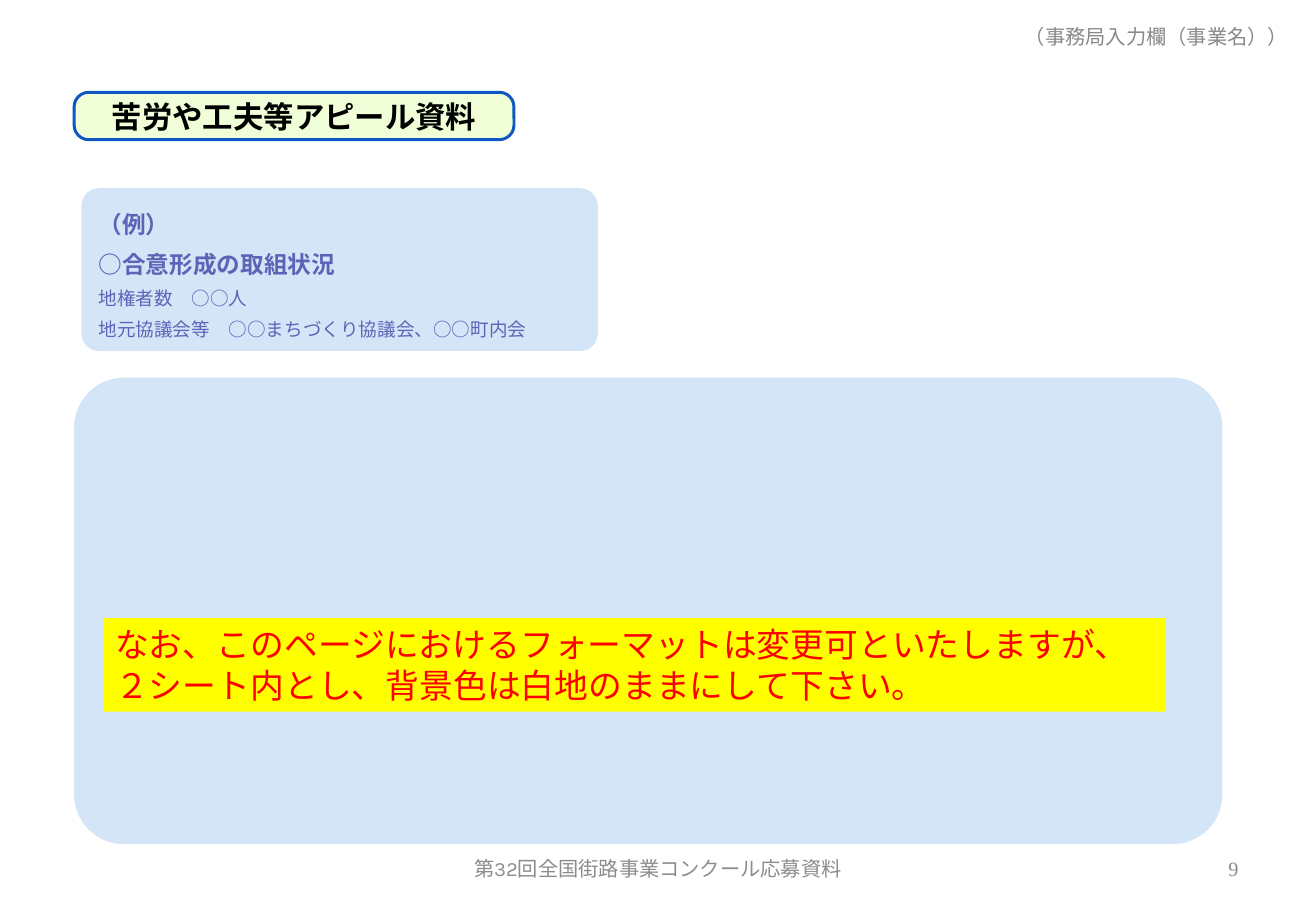
from pptx import Presentation
from pptx.dml.color import RGBColor
from pptx.enum.lang import MSO_LANGUAGE_ID
from pptx.enum.shapes import MSO_SHAPE
from pptx.enum.text import MSO_ANCHOR, PP_ALIGN
from pptx.util import Inches, Pt

BLACK = RGBColor(0x00, 0x00, 0x00)
RED = RGBColor(0xFF, 0x00, 0x00)
YELLOW = RGBColor(0xFF, 0xFF, 0x00)
PALE_BLUE = RGBColor(0xD4, 0xE5, 0xF7)
PALE_GREEN = RGBColor(0xF0, 0xFF, 0xD7)
BLUE = RGBColor(0x0E, 0x58, 0xC4)
VIOLET = RGBColor(0x5C, 0x64, 0xB7)
GRAY = RGBColor(0x89, 0x89, 0x89)
FOOTER_GRAY = RGBColor(0x8C, 0x8C, 0x8C)

SERIF = "Times New Roman"
TITLE = "苦労や工夫等アピール資料"
EXAMPLE = [
    ("（例）", 14, True),
    ("○合意形成の取組状況", 14, True),
    ("地権者数　○○人", 11, False),
    ("地元協議会等　○○まちづくり協議会、○○町内会", 11, False),
]
NOTICE = (
    "なお、このページにおけるフォーマットは変更可といたしますが、"
    "２シート内とし、背景色は白地のままにして下さい。"
)
LABELS = [
    ("（事務局入力欄（事業名））", (8.17, 0.1, 2.53, 0.4), PP_ALIGN.RIGHT, SERIF, GRAY),
    ("第32回全国街路事業コンクール応募資料", (3.7, 6.95, 3.43, 0.4), PP_ALIGN.CENTER, "Karla", FOOTER_GRAY),
    ("9", (7.76, 6.95, 2.53, 0.4), PP_ALIGN.RIGHT, SERIF, GRAY),
]

prs = Presentation()
prs.slide_width, prs.slide_height = Inches(10.83), Inches(7.5)
s = prs.slides.add_slide(prs.slide_layouts[6])


def add_panel(box, fill, radius=None, line=None):
    kind = MSO_SHAPE.RECTANGLE if radius is None else MSO_SHAPE.ROUNDED_RECTANGLE
    sp = s.shapes.add_shape(kind, *map(Inches, box))
    sp.shadow.inherit = False
    sp.fill.solid()
    sp.fill.fore_color.rgb = fill
    if radius is not None:
        sp.adjustments[0] = radius
    if line is None:
        sp.line.fill.background()
    else:
        sp.line.color.rgb = line
        sp.line.width = Pt(1.75)
    return sp


def write(sp, text, size=12, font="Arial", color=BLACK, bold=False,
          align=PP_ALIGN.LEFT, anchor=MSO_ANCHOR.MIDDLE, spacing=None):
    tf = sp.text_frame
    tf.word_wrap = True
    tf.vertical_anchor = anchor
    p = tf.add_paragraph() if tf.text else tf.paragraphs[0]
    p.alignment = align
    p.line_spacing = spacing
    r = p.add_run()
    r.text = text
    r.font.size = Pt(size)
    r.font.name = font
    r.font.bold = bold
    r.font.color.rgb = color
    r.font.language_id = MSO_LANGUAGE_ID.JAPANESE


add_panel((0.61, 3.11, 9.45, 3.84), PALE_BLUE, radius=0.107)

title = add_panel((0.61, 0.76, 3.62, 0.39), PALE_GREEN, radius=0.308, line=BLUE)
write(title, TITLE, size=18, bold=True, align=PP_ALIGN.CENTER)

notice = add_panel((0.85, 5.09, 8.74, 0.77), YELLOW)
write(notice, NOTICE, size=20, font=SERIF, color=RED, anchor=MSO_ANCHOR.TOP)

example = add_panel((0.67, 1.55, 4.25, 1.34), PALE_BLUE, radius=0.107)
for text, size, bold in EXAMPLE:
    write(example, text, size=size, color=VIOLET, bold=bold, spacing=1.4)

for text, box, align, font, color in LABELS:
    label = s.shapes.add_textbox(*map(Inches, box))
    write(label, text, font=font, color=color, align=align)

prs.save("out.pptx")
